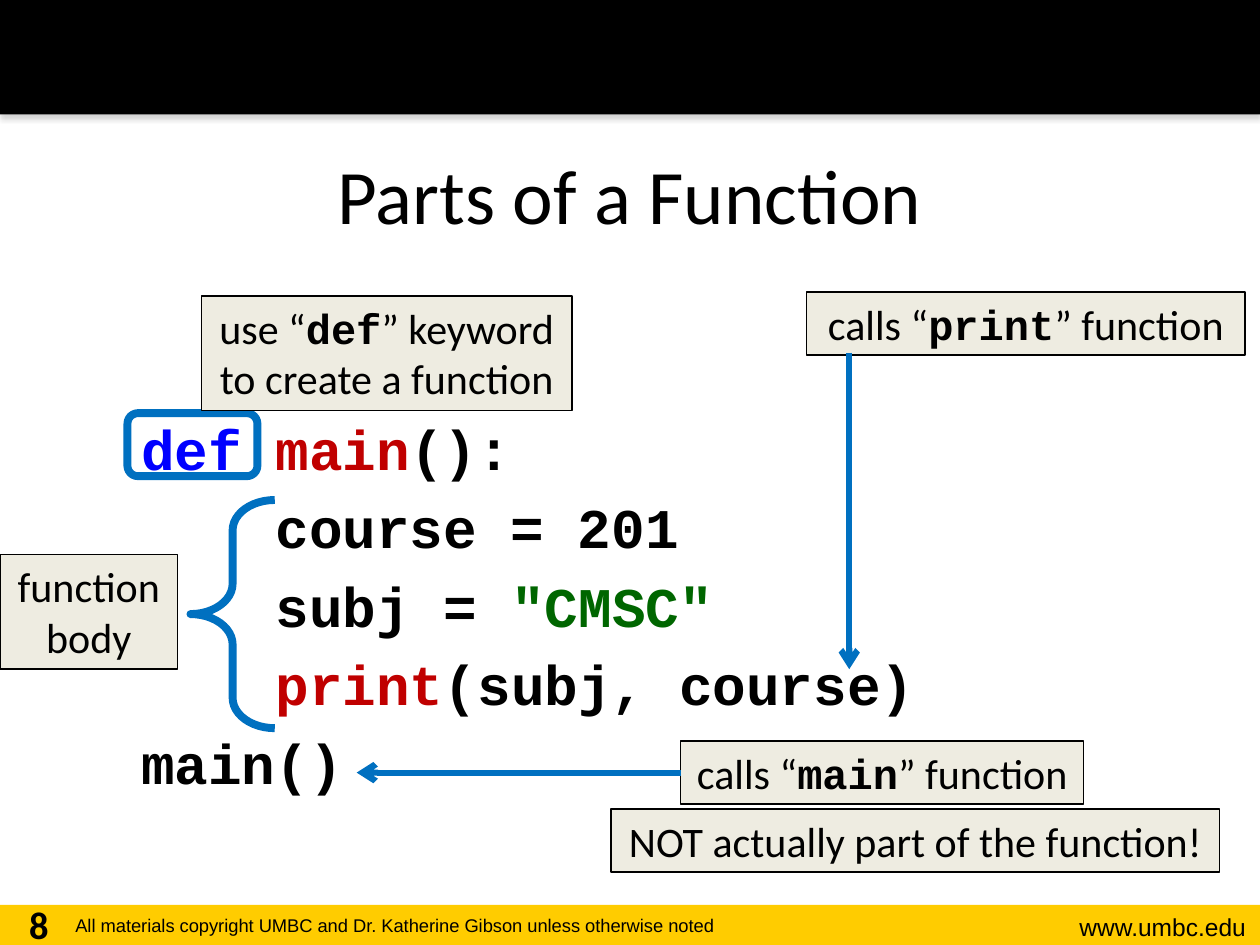
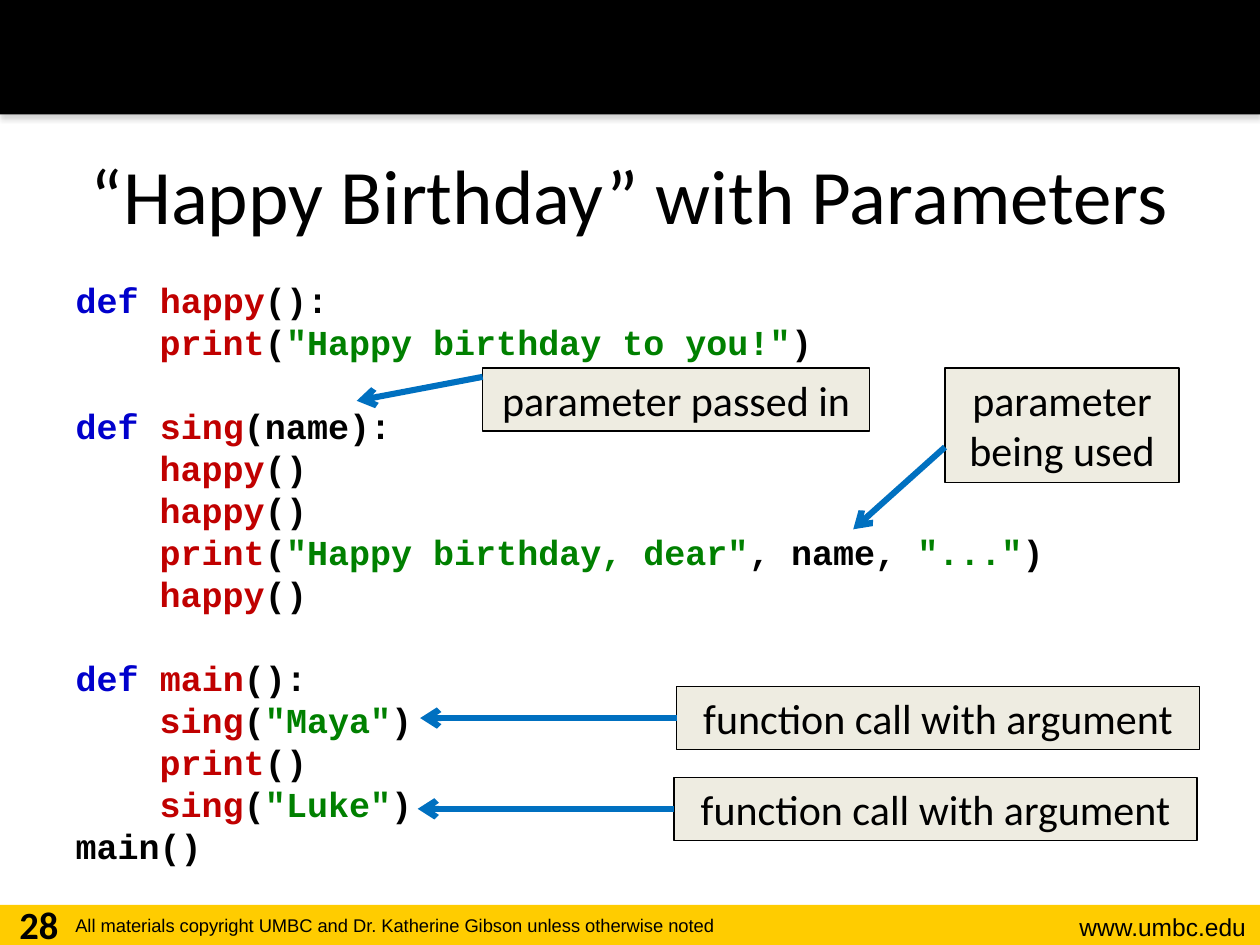
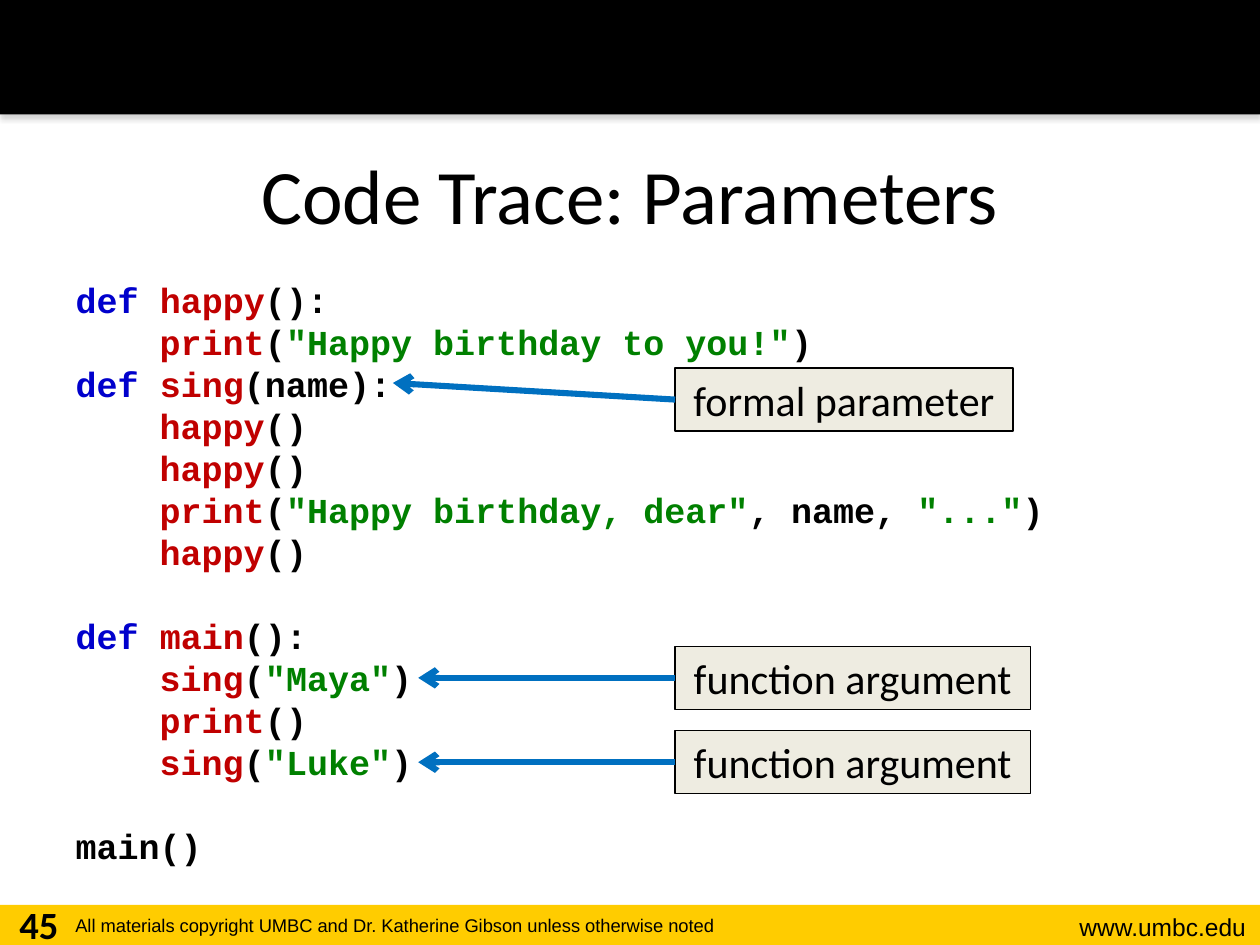
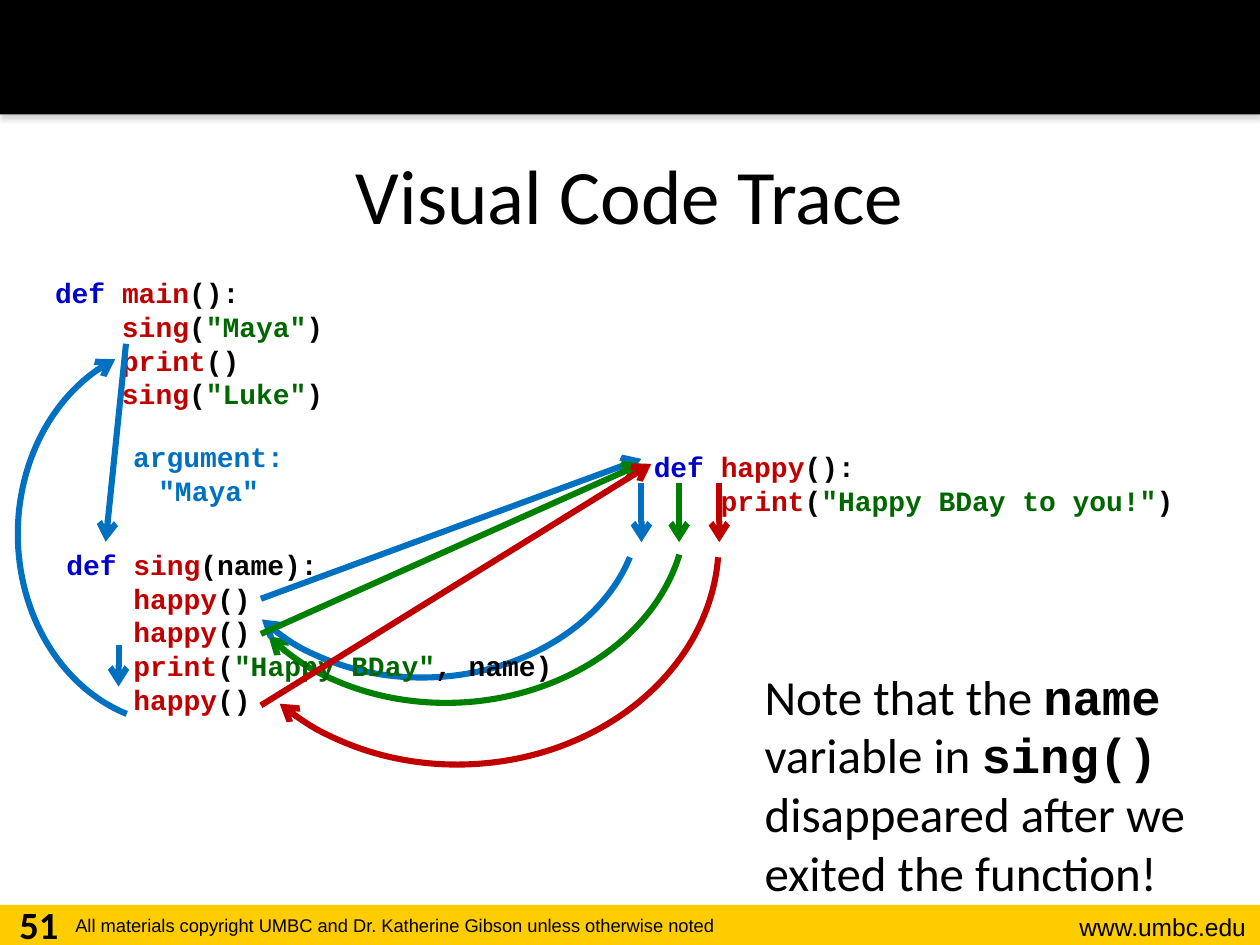
from pptx import Presentation
from pptx.dml.color import RGBColor
from pptx.enum.shapes import MSO_CONNECTOR, MSO_SHAPE
from pptx.enum.text import MSO_ANCHOR, MSO_AUTO_SIZE, PP_ALIGN
from pptx.oxml.ns import qn
from pptx.oxml.xmlchemy import OxmlElement
from pptx.util import Cm, Pt

RECT, ROUNDED, BRACE, ARC = (MSO_SHAPE.RECTANGLE, MSO_SHAPE.ROUNDED_RECTANGLE,
                             MSO_SHAPE.LEFT_BRACE, MSO_SHAPE.ARC)
STRAIGHT = MSO_CONNECTOR.STRAIGHT
LEFT, CENTER, RIGHT = PP_ALIGN.LEFT, PP_ALIGN.CENTER, PP_ALIGN.RIGHT
TOP, MIDDLE = MSO_ANCHOR.TOP, MSO_ANCHOR.MIDDLE
GROW, FIXED = MSO_AUTO_SIZE.SHAPE_TO_FIT_TEXT, MSO_AUTO_SIZE.NONE

SANS, MONO, FOOTER_FONT = "Calibri", "Courier New", "Arial"
BLACK, GOLD, BEIGE, SHADOW = "000000", "FFCC00", "EEECE1", "808080"
BLUE, GREEN, RED = "0070C0", "008000", "C00000"
KEYWORD, BRIGHT_KEYWORD, DARK_GREEN = "0000CC", "0000FF", "006600"
BODY_LAYOUT = 1
ARROW_WIDTH, OUTLINE_WIDTH = 3.5, 4.5
LINE_HEIGHT = 1.2

HAPPY = ["def happy():", '    print("Happy birthday to you!")']
SING = ["def sing(name):", "    happy()", "    happy()",
        '    print("Happy birthday, dear", name, "...")', "    happy()"]
MAIN = ["def main():", '    sing("Maya")', "    print()", '    sing("Luke")']


def rgb(color):
    return RGBColor.from_string(color)


def add_xml(parent, tag, **attrs):
    child = OxmlElement(tag)
    for name, value in attrs.items():
        child.set(name, str(value))
    parent.append(child)
    return child


def place(sp, box):
    sp.left, sp.top, sp.width, sp.height = (Cm(v) for v in box)


def write(sp, paragraphs, size=24, color=BLACK, font=SANS, bold=False,
          align=LEFT, anchor=TOP, fit=GROW, gap=0):
    """Fill a shape; a paragraph is a list of (text, overrides), an empty one leaves a line's gap."""
    tf = sp.text_frame
    tf.word_wrap, tf.auto_size, tf.vertical_anchor = True, fit, anchor
    p, skipped = None, 0
    for runs in paragraphs:
        if not runs:
            skipped += LINE_HEIGHT * size
            continue
        before = gap + skipped if p is not None else 0
        p = tf.paragraphs[0] if p is None else tf.add_paragraph()
        pPr = p._p.get_or_add_pPr()
        pPr.set("marL", "0")
        pPr.set("indent", "0")
        add_xml(pPr, "a:buNone")
        p.alignment, p.space_before = align, Pt(before)
        for text, changes in runs:
            r = p.add_run()
            r.text = text
            r.font.size = Pt(size)
            r.font.name = changes.get("font", font)
            r.font.bold = changes.get("bold", bold)
            r.font.color.rgb = rgb(changes.get("color", color))
        skipped = 0


def prose(text):
    """Runs of a sentence whose code words stand between backticks."""
    code = {"font": MONO, "bold": True}
    return [(part, code if i % 2 else {})
            for i, part in enumerate(text.split("`")) if part]


def code_runs(line, keyword, string):
    """Colour a code line: keyword, called or defined name, strings."""
    runs = []
    head, paren, rest = line.partition("(")
    if paren and head.startswith(("def ", " ")):
        if head.startswith("def "):
            runs.append(("def ", {"color": keyword}))
            head = head[4:]
        runs.append((head, {"color": RED}))
        line = paren + rest
    for i, part in enumerate(line.split('"')):
        if i % 2:
            runs.append((f'"{part}"', {"color": string}))
        elif part:
            runs.append((part, {}))
    return runs


def write_code(sp, lines, size, keyword=KEYWORD, string=GREEN, **fmt):
    write(sp, [code_runs(line, keyword, string) for line in lines],
          size=size, font=MONO, bold=True, **fmt)


def add_text(slide, box, paragraphs, **fmt):
    sp = slide.shapes.add_textbox(*(Cm(v) for v in box))
    write(sp, paragraphs, **fmt)
    return sp


def add_code(slide, box, lines):
    sp = slide.shapes.add_textbox(*(Cm(v) for v in box))
    write_code(sp, lines, 16, string=DARK_GREEN)


def add_shape(slide, kind, box, fill=None, line=None, width=0.75):
    sp = slide.shapes.add_shape(kind, *(Cm(v) for v in box))
    sp.shadow.inherit = False
    if fill:
        sp.fill.solid()
        sp.fill.fore_color.rgb = rgb(fill)
    else:
        sp.fill.background()
    if line:
        sp.line.color.rgb = rgb(line)
        sp.line.width = Pt(width)
    else:
        sp.line.fill.background()
    return sp


def add_arrowhead(sp):
    add_xml(sp.line._get_or_add_ln(), "a:tailEnd", type="arrow")


def add_arrow(slide, start, end, color=BLUE):
    sp = slide.shapes.add_connector(STRAIGHT, *(Cm(v) for v in start + end))
    sp.line.color.rgb = rgb(color)
    sp.line.width = Pt(ARROW_WIDTH)
    add_arrowhead(sp)
    add_xml(sp.element.spPr, "a:effectLst")


def add_arc(slide, box, start, end, color, rotation=0):
    """Arc with an arrowhead; start and end are clockwise degrees."""
    sp = add_shape(slide, ARC, box, line=color, width=ARROW_WIDTH)
    # adjustments count 100000ths, the file counts 60000ths of a degree
    sp.adjustments[0], sp.adjustments[1] = start * 0.6, end * 0.6
    sp.rotation = rotation
    add_arrowhead(sp)


def add_callout(slide, box, text, tip_x=None, tip_y=None, exit_at=0.5):
    """Beige label; tip_x adds an arrow from its left edge, level unless tip_y is given."""
    sp = add_shape(slide, RECT, box, BEIGE, BLACK)
    write(sp, [prose(text)], align=CENTER)
    if tip_x is not None:
        left, top, _, height = box
        exit_y = top + exit_at * height
        add_arrow(slide, (left, exit_y), (tip_x, exit_y if tip_y is None else tip_y))


def move_bands_to_master(prs, slide):
    """Draw the bands and footer texts on a slide, then hand them to the master."""
    footer = add_shape(slide, RECT, (0, 18.24, 25.4, 0.81), GOLD)
    header = add_shape(slide, RECT, (0, 0, 25.4, 2.31), BLACK)
    effects = header.element.spPr.find(qn("a:effectLst"))
    shadow = add_xml(effects, "a:outerShdw", blurRad=Pt(3.1), dist=Pt(1.8),
                     dir=90 * 60000, algn="t", rotWithShape=0)
    add_xml(add_xml(shadow, "a:srgbClr", val=SHADOW), "a:alpha", val=35000)
    site = add_text(slide, (20.32, 18.26, 5.05, 0.86), [prose("www.umbc.edu")],
                    size=14, font=FOOTER_FONT, align=RIGHT)
    rights = add_text(
        slide, (1.27, 18.31, 16.66, 0.74),
        [prose("All materials copyright UMBC and Dr. Katherine Gibson unless otherwise noted")],
        size=10.5, font=FOOTER_FONT)
    tree = prs.slide_master.element.cSld.spTree
    for number, sp in enumerate((footer, header, site, rights), 101):
        sp.element.nvSpPr.cNvPr.set("id", str(number))
        tree.append(sp.element)


def new_slide(prs, title, number):
    """Slide with title and page number; returns it with its body placeholder."""
    slide = prs.slides.add_slide(prs.slide_layouts[BODY_LAYOUT])
    place(slide.shapes.title, (1.27, 2.31, 22.86, 3.18))
    write(slide.shapes.title, [prose(title)], size=44, align=CENTER,
          anchor=MIDDLE, fit=FIXED)
    add_text(slide, (0, 18.03, 1.57, 1.02), [prose(str(number))], size=22,
             bold=True, align=CENTER, fit=FIXED)
    return slide, slide.placeholders[1]


def code_slide(prs, title, number, lines):
    slide, body = new_slide(prs, title, number)
    place(body, (1.27, 5.49, 22.86, 12.55))
    write_code(body, lines, 20, fit=FIXED)
    return slide


def function_parts_slide(prs):
    slide, body = new_slide(prs, "Parts of a Function", 8)
    place(body, (2.59, 8.23, 18.97, 9.96))
    write_code(body, ["def main():", "    course = 201", '    subj = "CMSC"',
                      "    print(subj, course)", "main()"],
               32, BRIGHT_KEYWORD, DARK_GREEN, fit=FIXED, gap=6.4)
    add_shape(slide, ROUNDED, (2.57, 8.33, 2.62, 1.27), line=BLUE, width=OUTLINE_WIDTH)
    brace = add_shape(slide, BRACE, (3.84, 10.08, 1.7, 4.6), line=BLUE, width=OUTLINE_WIDTH)
    brace.adjustments[0] = 0.36
    add_callout(slide, (16.26, 5.89, 8.84, 1.27), "calls “`print`” function")
    add_arrow(slide, (17.12, 7.11), (17.12, 13.49))
    add_callout(slide, (0, 11.18, 3.58, 2.31), "function body")
    add_callout(slide, (4.06, 5.97, 7.47, 2.31), "use “`def`” keyword to create a function")
    add_callout(slide, (13.72, 14.94, 8.13, 1.27), "calls “`main`” function", 7.19)
    add_callout(slide, (12.32, 16.31, 12.27, 1.27), "NOT actually part of the function!")
    return slide


def parameters_slide(prs):
    slide = code_slide(prs, "“Happy Birthday” with Parameters", 28,
                       HAPPY + [""] + SING + [""] + MAIN + ["main()"])
    add_callout(slide, (9.73, 7.42, 7.8, 1.27), "parameter passed in", 7.19, 8.08, 0.14)
    add_callout(slide, (19.05, 7.42, 4.72, 2.31), "parameter being used", 17.2, 10.67, 0.69)
    for left, top in ((13.64, 13.84), (13.59, 15.67)):
        add_callout(slide, (left, top, 10.54, 1.27), "function call with argument",
                    left - 5.17)


def code_trace_slide(prs):
    slide = code_slide(prs, "Code Trace: Parameters", 45,
                       HAPPY + SING + [""] + MAIN + ["", "main()"])
    left = 13.61
    for top in (13.03, 14.73):
        add_callout(slide, (left, top, 7.16, 1.27), "function argument", left - 5.18)
    add_callout(slide, (left, 7.42, 6.81, 1.27), "formal parameter", 7.92, 7.72)


def visual_trace_slide(prs):
    slide, note = new_slide(prs, "Visual Code Trace", 51)
    place(note, (15.16, 13.3, 9.86, 4.98))
    write(note, [prose("Note that the `name` variable in `sing()` disappeared "
                       "after we exited the function!")], size=28, fit=FIXED)

    # returns from happy() that pass behind the code
    add_arc(slide, (5.26, 5.59, 7.65, 9.5), 102.9, 238.47, GREEN, 267.4)
    add_arc(slide, (5.18, 5.92, 6.83, 8.64), 106.2, 238.47, BLUE, 267.4)

    add_code(slide, (0.86, 5.44, 7.11, 3), MAIN)
    add_code(slide, (1.09, 10.92, 11.28, 3.68),
             SING[:3] + ['    print("Happy BDay", name)'] + SING[4:])
    add_code(slide, (12.93, 8.94, 11.2, 1.63),
             HAPPY[:1] + ['    print("Happy BDay to you!")'])
    add_text(slide, (2.34, 8.74, 3.73, 1.63), [prose("argument:"), prose('"Maya"')],
             size=16, color=BLUE, font=MONO, bold=True, align=CENTER)

    add_arrow(slide, (2.54, 6.93), (2.13, 10.92))
    add_arrow(slide, (2.39, 13), (2.39, 13.84))
    calls = ((12.07, (12.93, 9.25), 12.93, BLUE),
             (12.78, (12.93, 9.35), 13.69, GREEN),
             (14.22, (13.13, 9.35), 14.5, RED))
    for call_y, entry, run_x, color in calls:
        add_arrow(slide, (5.26, call_y), entry, color)
        add_arrow(slide, (run_x, 9.74), (run_x, 10.93), color)

    # returns that pass in front
    add_arc(slide, (0.36, 6.93, 6.5, 7.67), 106.2, 249.94, BLUE)
    add_arc(slide, (4.9, 5.82, 8.79, 10.39), 95, 231.67, RED, 267.4)


def main():
    prs = Presentation()
    prs.slide_width, prs.slide_height = Cm(25.4), Cm(19.05)
    first = function_parts_slide(prs)
    move_bands_to_master(prs, first)
    parameters_slide(prs)
    code_trace_slide(prs)
    visual_trace_slide(prs)
    prs.save("out.pptx")


if __name__ == "__main__":
    main()
